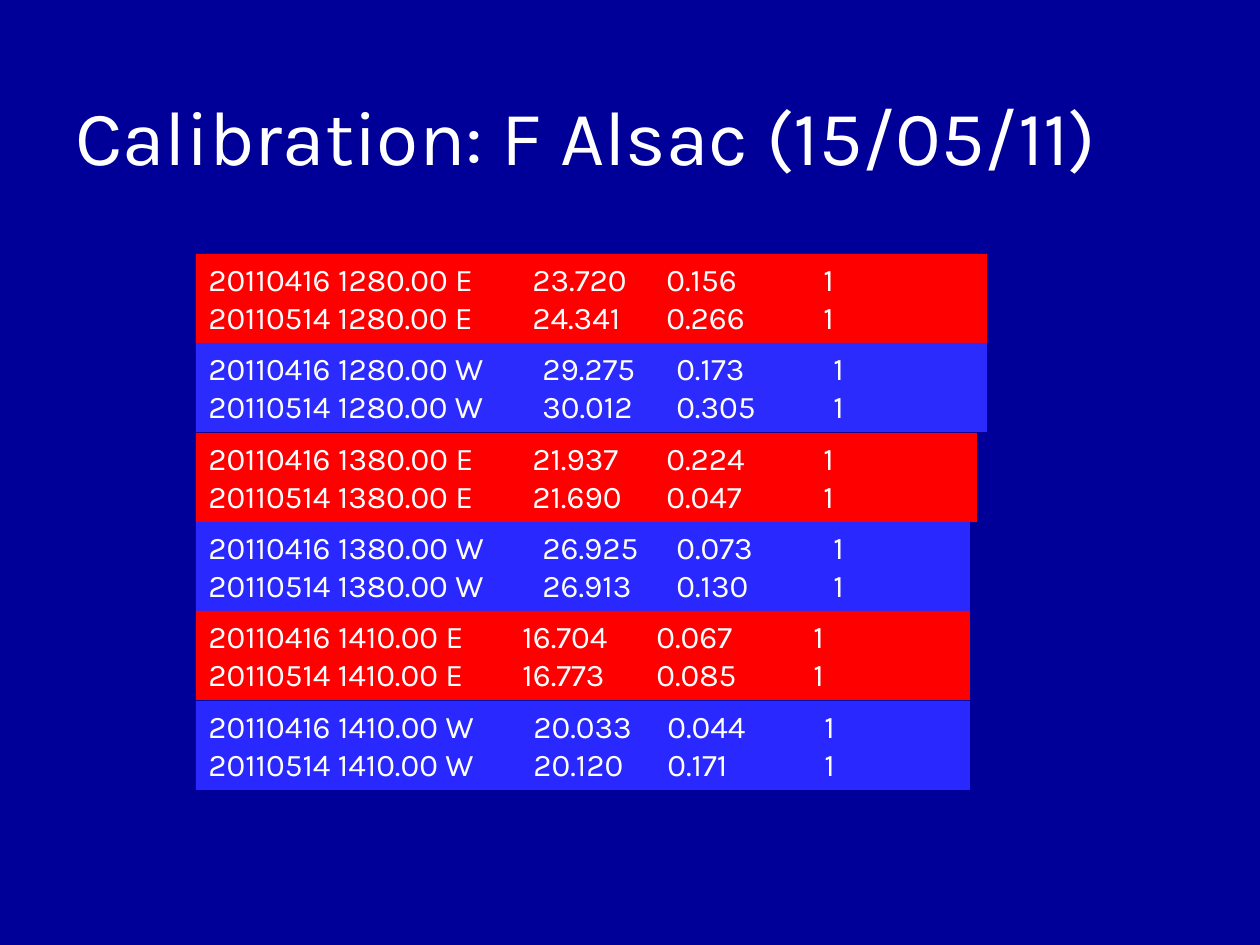
import pptx
import pptx.dml.color
import pptx.enum.shapes
import pptx.enum.text
import pptx.oxml.ns
import pptx.util
from lxml import etree

RGB = pptx.dml.color.RGBColor
NAVY = RGB(0x00, 0x00, 0x99)
RED = RGB(0xFF, 0x00, 0x00)
BLUE = RGB(0x29, 0x29, 0xFF)
BRIGHT_BLUE = RGB(0x2B, 0x2B, 0xFE)
WHITE = RGB(0xFF, 0xFF, 0xFF)
FONT = "Karla"

# Band geometry in px; value columns follow the first tab stop
BANDS_LEFT, BANDS_TOP, BANDS_HEIGHT = 196, 254, 536
COLUMN_OFFSETS = (0, 134, 291)
DATES = ("20110416", "20110514")

# Channel, fill, width, first tab stop, readings for each date
BANDS = [
    ("1280.00 E", RED, 791, 324, [("23.720", "0.156"), ("24.341", "0.266")]),
    ("1280.00 W", BRIGHT_BLUE, 791, 334, [("29.275", "0.173"), ("30.012", "0.305")]),
    ("1380.00 E", RED, 781, 324, [("21.937", "0.224"), ("21.690", "0.047")]),
    ("1380.00 W", BLUE, 774, 334, [("26.925", "0.073"), ("26.913", "0.130")]),
    ("1410.00 E", RED, 774, 314, [("16.704", "0.067"), ("16.773", "0.085")]),
    ("1410.00 W", BLUE, 774, 325, [("20.033", "0.044"), ("20.120", "0.171")]),
]


def px(length):
    return pptx.util.Emu(round(length * 914400 / 126))


def style(paragraph, size):
    paragraph.alignment = pptx.enum.text.PP_ALIGN.LEFT
    for run in paragraph.runs:
        run.font.name = FONT
        run.font.size = pptx.util.Pt(size)
        run.font.color.rgb = WHITE


def set_tabs(paragraph, stops):
    qn = pptx.oxml.ns.qn
    tabs = etree.SubElement(paragraph._p.get_or_add_pPr(), qn("a:tabLst"))
    for stop in stops:
        etree.SubElement(tabs, qn("a:tab"), pos=str(px(stop)), algn="l")


def add_title(slide, text):
    title = slide.shapes.add_textbox(px(63), px(40), px(1134), px(190))
    frame = title.text_frame
    frame.word_wrap = True
    frame.vertical_anchor = pptx.enum.text.MSO_ANCHOR.MIDDLE
    frame.text = text
    style(frame.paragraphs[0], 44)


def add_band(group, top, height, channel, fill, width, first_stop, readings):
    band = group.shapes.add_shape(
        pptx.enum.shapes.MSO_SHAPE.RECTANGLE,
        px(BANDS_LEFT), px(top), px(width), px(height))
    band.shadow.inherit = False
    band.fill.solid()
    band.fill.fore_color.rgb = fill
    band.line.fill.background()
    frame = band.text_frame
    frame.word_wrap = True
    frame.auto_size = pptx.enum.text.MSO_AUTO_SIZE.SHAPE_TO_FIT_TEXT
    frame.vertical_anchor = pptx.enum.text.MSO_ANCHOR.TOP
    frame.text = "\n".join(
        f"{date} {channel}\t{value}\t{error}\t1"
        for date, (value, error) in zip(DATES, readings))
    for line in frame.paragraphs:
        set_tabs(line, [first_stop + offset for offset in COLUMN_OFFSETS])
        style(line, 18)


def main():
    deck = pptx.Presentation()
    deck.slide_width, deck.slide_height = px(1260), px(945)
    slide = deck.slides.add_slide(deck.slide_layouts[6])
    slide.background.fill.solid()
    slide.background.fill.fore_color.rgb = NAVY

    add_title(slide, "Calibration: F Alsac (15/05/11)")

    # Stacked bands of calibration readings
    readings_group = slide.shapes.add_group_shape()
    pitch = BANDS_HEIGHT / len(BANDS)
    for index, band in enumerate(BANDS):
        top = round(BANDS_TOP + index * pitch)
        add_band(readings_group, top, round(pitch), *band)

    deck.save("out.pptx")


if __name__ == "__main__":
    main()
